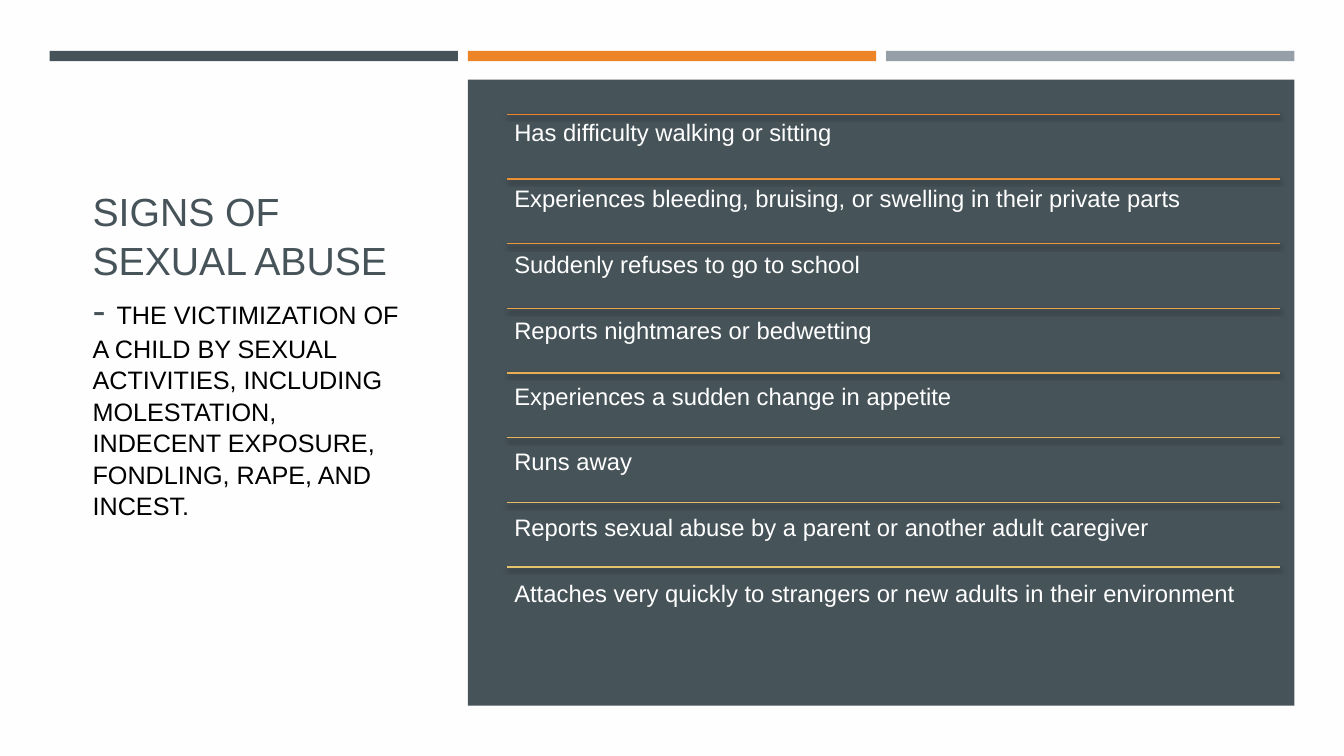
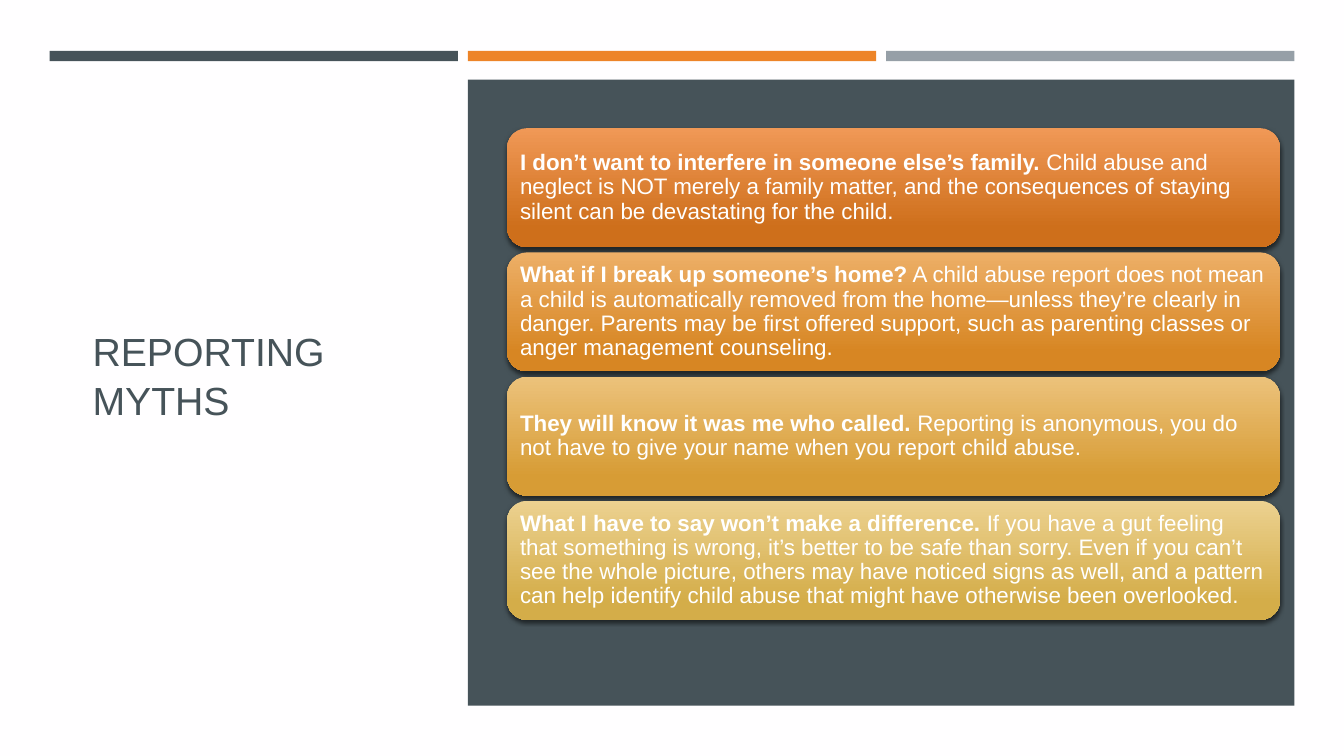
"""Two training slides on the signs and the reporting of child abuse."""
from lxml.etree import SubElement
from pptx import Presentation
from pptx.dml.color import RGBColor
from pptx.enum.shapes import MSO_CONNECTOR, MSO_SHAPE
from pptx.enum.text import MSO_ANCHOR, MSO_AUTO_SIZE, PP_ALIGN
from pptx.oxml.ns import qn
from pptx.util import Cm, Pt

PAPER = RGBColor(0xFF, 0xFE, 0xFF)
SLATE = RGBColor(0x46, 0x53, 0x59)
ORANGE = RGBColor(0xED, 0x84, 0x28)
GREY = RGBColor(0x96, 0x9F, 0xA7)
WHITE = RGBColor(0xFF, 0xFF, 0xFF)
BLACK = RGBColor(0, 0, 0)
RULES = [RGBColor.from_string(c) for c in (
    "ED8428", "EB8F32", "EA9A3D", "E9A447", "E8AD50", "E7B55A", "E6BD64", "E6C46D")]
GRADIENTS = [tuple(RGBColor.from_string(c) for c in pair) for pair in (
    ("F09856", "CE6F1B"), ("EDAF67", "D78623"), ("ECC27B", "D79C35"), ("ECD190", "D4AD49"))]

TITLE_AND_BODY, TITLE_ONLY = 1, 5
LEFT, WIDTH = 12.78, 19.48
RULE_TOP, RULE_PITCH = 2.88, 1.63
CARD_TOP, CARD_PITCH, CARD_HEIGHT = 3.23, 3.13, 3.0
INSET = 0.18

SIGNS = [
    "Has difficulty walking or sitting",
    "Experiences bleeding, bruising, or swelling in their private parts",
    "Suddenly refuses to go to school",
    "Reports nightmares or bedwetting",
    "Experiences a sudden change in appetite",
    "Runs away",
    "Reports sexual abuse by a parent or another adult caregiver",
    "Attaches very quickly to strangers or new adults in their environment",
]
MYTHS = [
    ("I don’t want to interfere in someone else’s family.",
     " Child abuse and neglect is NOT merely a family matter, and the consequences of "
     "staying silent can be devastating for the child."),
    ("What if I break up someone’s home?",
     " A child abuse report does not mean a child is automatically removed from the "
     "home—unless they’re clearly in danger. Parents may be first offered support, such "
     "as parenting classes or anger management counseling."),
    ("They will know it was me who called.",
     " Reporting is anonymous, you do not have to give your name when you report child "
     "abuse."),
    ("What I have to say won’t make a difference.",
     " If you have a gut feeling that something is wrong, it’s better to be safe than "
     "sorry. Even if you can’t see the whole picture, others may have noticed signs as "
     "well, and a pattern can help identify child abuse that might have otherwise been "
     "overlooked."),
]


class Deck:
    """Holds the style and the current slide."""

    def __init__(self):
        self.prs = Presentation()
        self.prs.slide_width, self.prs.slide_height = Cm(33.87), Cm(19.05)
        self.s = None

    def new_slide(self, layout):
        """Start a slide with the three bars and the dark panel."""
        self.s = self.prs.slides.add_slide(self.prs.slide_layouts[layout])
        fill = self.s.background.fill
        fill.solid()
        fill.fore_color.rgb = PAPER
        for i, color in enumerate((SLATE, ORANGE, GREY)):
            self.block(1.25 + 10.54 * i, 1.28, 10.29, 0.26, color)
        self.block(11.79, 2.01, 20.83, 15.77, SLATE)

    def block(self, x, y, w, h, color):
        """Add a plain rectangle."""
        sp = self.s.shapes.add_shape(MSO_SHAPE.RECTANGLE, Cm(x), Cm(y), Cm(w), Cm(h))
        sp.shadow.inherit = False
        sp.fill.solid()
        sp.fill.fore_color.rgb = color
        sp.line.fill.background()

    def place(self, sp, x, y, w, h):
        """Move a placeholder and stop it from resizing its text."""
        sp.left, sp.top, sp.width, sp.height = Cm(x), Cm(y), Cm(w), Cm(h)
        sp.text_frame.word_wrap = True
        sp.text_frame.auto_size = MSO_AUTO_SIZE.NONE

    def run(self, p, text, size, color, bold=False):
        """Add a formatted run to a paragraph."""
        r = p.add_run()
        r.text = text
        r.font.name, r.font.size, r.font.bold = "Arial", Pt(size), bold
        r.font.color.rgb = color

    def title(self, heading, detail="", bottom=0.13):
        """Fill the title, with an optional smaller definition after it."""
        sp = self.s.shapes.title
        self.place(sp, 2.08, 2.9, 8.48, 13.08)
        tf = sp.text_frame
        tf.vertical_anchor, tf.margin_bottom = MSO_ANCHOR.MIDDLE, Cm(bottom)
        p = tf.paragraphs[0]
        p.alignment, p.line_spacing = PP_ALIGN.LEFT, 1.04
        self.run(p, heading, 28, SLATE)
        if detail:
            self.run(p, detail, 18, BLACK)

    def shadow(self, sp):
        """Give a shape a soft shadow below it."""
        effects = SubElement(sp.element.spPr, qn("a:effectLst"))
        outer = SubElement(effects, qn("a:outerShdw"), blurRad=str(Pt(3)),
                           dist=str(Pt(2)), dir="5400000", rotWithShape="0")
        color = SubElement(outer, qn("a:srgbClr"), val="000000")
        SubElement(color, qn("a:alpha"), val="55000")

    def rule(self, y, color):
        """Add a thin line across the panel."""
        line = self.s.shapes.add_connector(
            MSO_CONNECTOR.STRAIGHT, Cm(LEFT), Cm(y), Cm(LEFT + WIDTH), Cm(y))
        line.line.color.rgb, line.line.width = color, Pt(1)
        self.shadow(line)

    def ruled_list(self, items):
        """Fill the body with one item under each rule."""
        for i, color in enumerate(RULES):
            self.rule(RULE_TOP + RULE_PITCH * i, color)
        sp = self.s.placeholders[1]
        sp.element.getparent().append(sp.element)
        self.place(sp, LEFT, RULE_TOP, WIDTH, RULE_PITCH * len(items))
        tf = sp.text_frame
        tf.margin_left = tf.margin_right = tf.margin_top = tf.margin_bottom = Cm(INSET)
        tf.text = "\n".join(items)
        for p in tf.paragraphs:
            p.line_spacing, p.space_before, p.space_after = 0.9, Pt(0), Pt(28.6)
            pPr = p._p.get_or_add_pPr()
            pPr.set("marL", "0")
            pPr.set("indent", "0")
            SubElement(pPr, qn("a:buNone"))
            font = p.runs[0].font
            font.name, font.size, font.color.rgb = "Arial", Pt(17), WHITE

    def card(self, y, colors, claim, answer):
        """Add a rounded gradient card with a bold claim and its answer."""
        sp = self.s.shapes.add_shape(
            MSO_SHAPE.ROUNDED_RECTANGLE, Cm(LEFT), Cm(y), Cm(WIDTH), Cm(CARD_HEIGHT))
        sp.fill.gradient()
        sp.fill.gradient_angle = 270
        for stop, position, color in zip(sp.fill.gradient_stops, (0, 0.84), colors):
            stop.position, stop.color.rgb = position, color
        sp.line.fill.background()
        self.shadow(sp)
        tf = sp.text_frame
        tf.word_wrap, tf.vertical_anchor = True, MSO_ANCHOR.MIDDLE
        tf.margin_left = tf.margin_right = tf.margin_top = tf.margin_bottom = Cm(INSET)
        p = tf.paragraphs[0]
        p.alignment, p.line_spacing = PP_ALIGN.LEFT, 0.9
        self.run(p, claim, 16, WHITE, bold=True)
        self.run(p, answer, 16, WHITE)


def main():
    """Build both slides and save them."""
    deck = Deck()
    deck.new_slide(TITLE_AND_BODY)
    deck.title("SIGNS OF SEXUAL ABUSE - ",
               "THE VICTIMIZATION OF A CHILD BY SEXUAL ACTIVITIES, INCLUDING "
               "MOLESTATION, INDECENT EXPOSURE, FONDLING, RAPE, AND INCEST.", bottom=1.22)
    deck.ruled_list(SIGNS)

    deck.new_slide(TITLE_ONLY)
    deck.title("REPORTING MYTHS")
    for i, (colors, (claim, answer)) in enumerate(zip(GRADIENTS, MYTHS)):
        deck.card(CARD_TOP + CARD_PITCH * i, colors, claim, answer)
    deck.prs.save("out.pptx")


if __name__ == "__main__":
    main()
